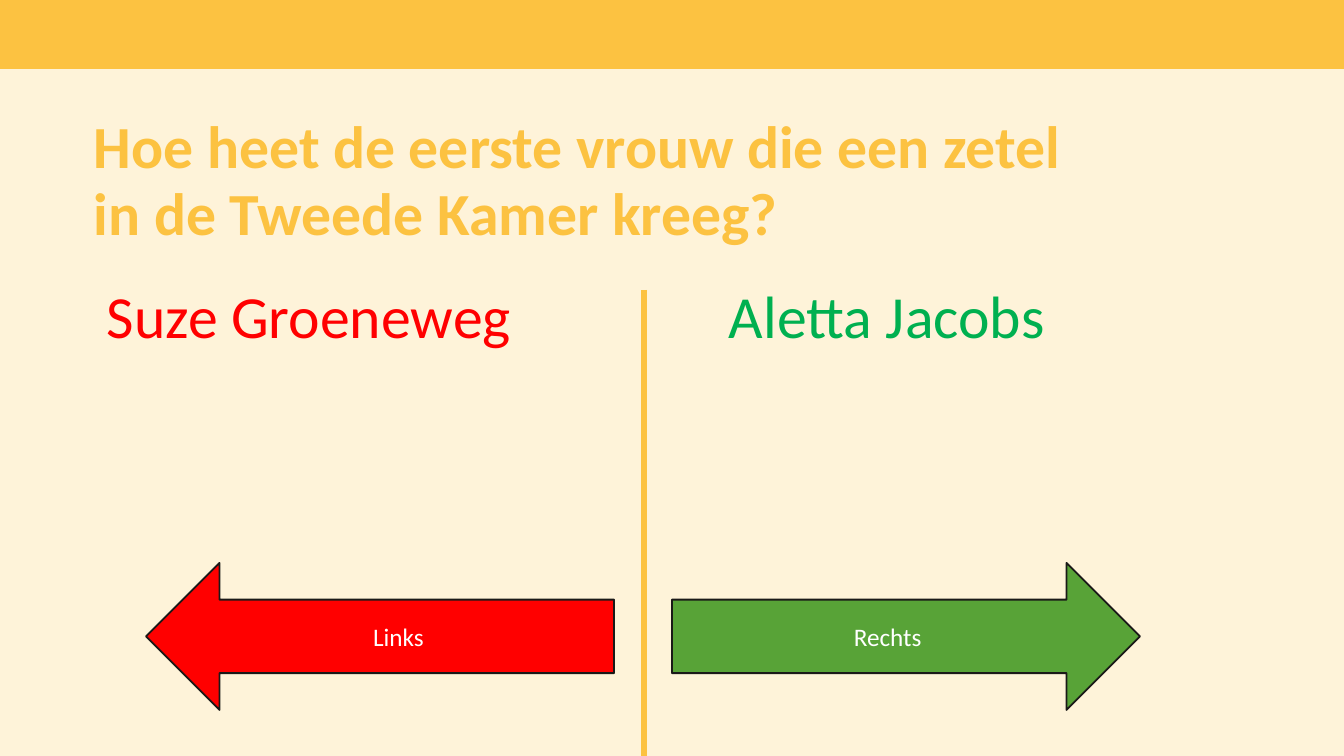
from lxml.etree import SubElement
from pptx import Presentation
from pptx.dml.color import RGBColor
from pptx.enum.shapes import MSO_CONNECTOR, MSO_SHAPE
from pptx.enum.text import MSO_ANCHOR, PP_ALIGN
from pptx.oxml.ns import qn
from pptx.util import Pt

EMU_PER_PX = 914400 / 134.4
WIDTH, HEIGHT = 1344, 756
FONT = "Calibri"
COLORS = {
    "cream": "FEF3D9",
    "yellow": "FCC241",
    "red": "FF0000",
    "answer_green": "00B050",
    "arrow_green": "58A337",
    "ink": "1A1918",
    "white": "FFFFFF",
}


def px(length):
    return round(length * EMU_PER_PX)


def rgb(name):
    return RGBColor.from_string(COLORS[name])


class QuizSlide:
    def __init__(self, slide):
        self.slide = slide
        slide.background.fill.solid()
        slide.background.fill.fore_color.rgb = rgb("cream")

    def add_run(self, paragraph, text, size, color, bold=False):
        run = paragraph.add_run()
        run.text = text
        run.font.name = FONT
        run.font.size = Pt(size)
        run.font.bold = bold
        run.font.color.rgb = rgb(color)

    def text(self, box, text, color, bold=False, line_pt=None, insets=(13, 7, 13, 7)):
        frame = self.slide.shapes.add_textbox(*map(px, box)).text_frame
        frame.word_wrap = True
        (frame.margin_left, frame.margin_top,
         frame.margin_right, frame.margin_bottom) = map(px, insets)
        paragraph = frame.paragraphs[0]
        if line_pt:
            paragraph.line_spacing = Pt(line_pt)
        self.add_run(paragraph, text, 32, color, bold)

    def shape(self, kind, box, fill, outline=None):
        shape = self.slide.shapes.add_shape(kind, *map(px, box))
        shape.shadow.inherit = False
        shape.fill.solid()
        shape.fill.fore_color.rgb = rgb(fill)
        if outline:
            shape.line.color.rgb = rgb(outline)
            shape.line.width = Pt(1)
        else:
            shape.line.fill.background()
        return shape

    def arrow(self, kind, box, fill, label):
        frame = self.shape(kind, box, fill, "ink").text_frame
        frame.vertical_anchor = MSO_ANCHOR.MIDDLE
        paragraph = frame.paragraphs[0]
        paragraph.alignment = PP_ALIGN.CENTER
        self.add_run(paragraph, label, 13.5, "white")

    def line(self, start, end, color, weight):
        line = self.slide.shapes.add_connector(
            MSO_CONNECTOR.STRAIGHT, *map(px, start + end))
        line.line.color.rgb = rgb(color)
        line.line.width = Pt(weight)
        SubElement(line._element.spPr, qn("a:effectLst"))


def main():
    deck = Presentation()
    deck.slide_width, deck.slide_height = px(WIDTH), px(HEIGHT)
    quiz = QuizSlide(deck.slides.add_slide(deck.slide_layouts[6]))

    quiz.shape(MSO_SHAPE.RECTANGLE, (0, 0, WIDTH, 69), "yellow")
    quiz.text((94, 106, 1023, 132),
              "Hoe heet de eerste vrouw die een zetel in de Tweede Kamer kreeg?",
              "yellow", bold=True, line_pt=36, insets=(0, 7, 0, 0))
    quiz.line((644, 290), (644, HEIGHT), "yellow", 3)

    answers = [
        ("Suze Groeneweg", "red", 94, 449,
         MSO_SHAPE.LEFT_ARROW, "Links", "red", 146),
        ("Aletta Jacobs", "answer_green", 716, 516,
         MSO_SHAPE.RIGHT_ARROW, "Rechts", "arrow_green", 672),
    ]
    for name, color, left, width, kind, label, fill, arrow_left in answers:
        quiz.text((left, 272, width, 86), name, color)
        quiz.arrow(kind, (arrow_left, 563, 468, 147), fill, label)

    deck.save("out.pptx")


if __name__ == "__main__":
    main()
